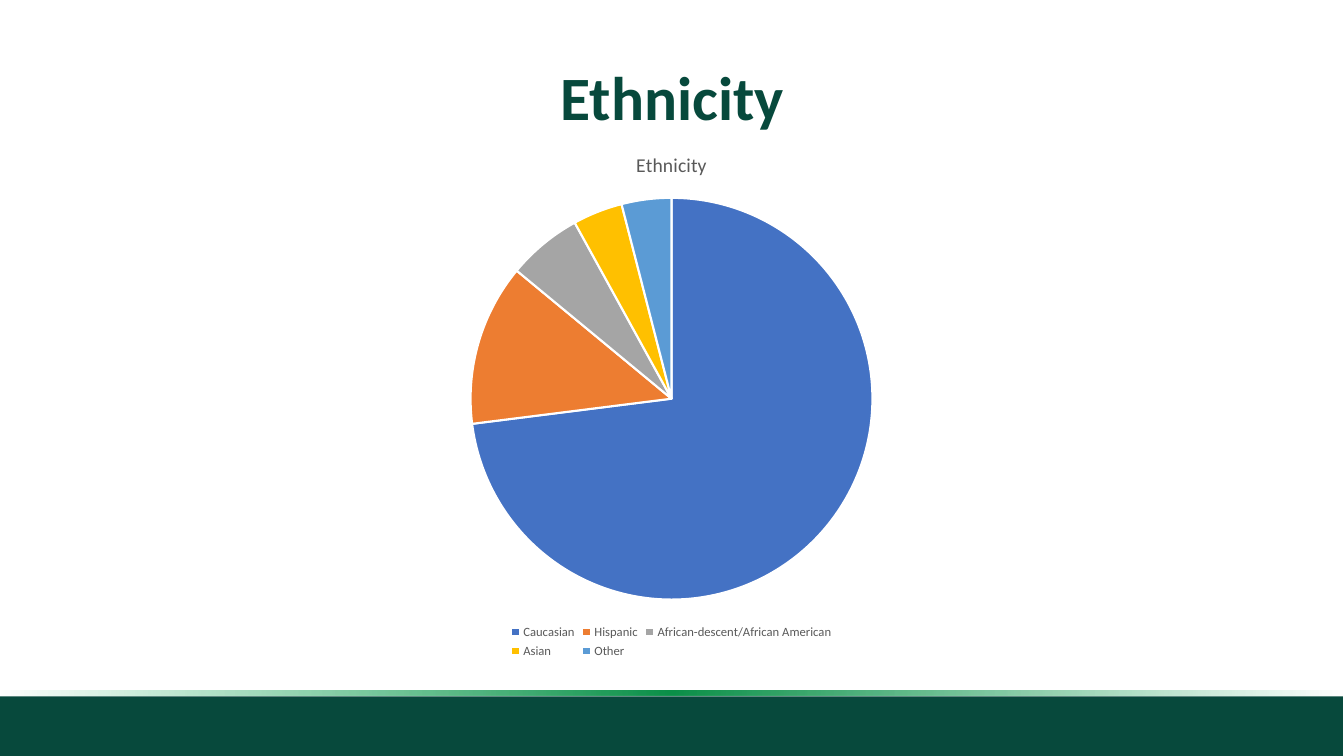
from lxml import etree
from pptx import Presentation
from pptx.chart.data import CategoryChartData
from pptx.dml.color import RGBColor
from pptx.enum.chart import XL_CHART_TYPE as ChartType, XL_LEGEND_POSITION as LegendPosition
from pptx.enum.shapes import MSO_SHAPE as Shape
from pptx.enum.text import MSO_ANCHOR as Anchor, PP_ALIGN as Align
from pptx.oxml.ns import qn
from pptx.util import Inches, Pt

HEADING = "Ethnicity"
SHARES = [
    ("Caucasian", 73, "blue"),
    ("Hispanic", 13, "orange"),
    ("African-descent/African American", 6, "gray"),
    ("Asian", 4, "yellow"),
    ("Other", 4, "sky"),
]
COLORS = {
    "green": "07493C", "text": "595959", "white": "FFFFFF",
    "blue": "4472C4", "orange": "ED7D31", "gray": "A5A5A5",
    "yellow": "FFC000", "sky": "5B9BD5",
    "glow_start": "0D9D4F", "glow_middle": "0C9049", "glow_end": "0FAB56",
}
GLOW_STOPS = [(0, "glow_start", 0), (50, "glow_middle", 100), (100, "glow_end", 0)]
PLACES = {
    "footer": (0, 6.91, 13.32, 0.6),
    "glow": (0, 6.85, 13.33, 0.05),
    "heading": (0.92, 0.4, 11.5, 1.19),
    "pie": (2.44, 1.31, 8.44, 5.26),
}
FONTS = {
    "heading": {"size": Pt(44), "bold": True, "name": "Calibri"},
    "pie": {"size": Pt(10), "bold": False, "name": "Calibri"},
    "pie_title": {"size": Pt(14), "bold": False, "name": "Calibri"},
    "legend": {"size": Pt(9), "bold": False, "name": "Calibri"},
}


def color(name):
    """Return the named colour."""
    return RGBColor.from_string(COLORS[name])


def place(part):
    """Return the left, top, width and height of a part."""
    return [Inches(length) for length in PLACES[part]]


def style(font, part, color_name):
    """Apply the format values of a part to a font."""
    for attribute, value in FONTS[part].items():
        setattr(font, attribute, value)
    font.color.rgb = color(color_name)


def add_band(slide, part):
    """Add a borderless green band."""
    band = slide.shapes.add_shape(Shape.RECTANGLE, *place(part))
    band.shadow.inherit = False
    band.fill.solid()
    band.fill.fore_color.rgb = color("green")
    band.line.fill.background()
    return band


def fade(band):
    """Replace the fill of a band with a gradient that fades at both ends."""
    solid = band.fill._xPr.find(qn("a:solidFill"))
    gradient = etree.Element(qn("a:gradFill"), rotWithShape="1")
    stops = etree.SubElement(gradient, qn("a:gsLst"))
    for position, name, opacity in GLOW_STOPS:
        stop = etree.SubElement(stops, qn("a:gs"), pos=str(position * 1000))
        tint = etree.SubElement(stop, qn("a:srgbClr"), val=COLORS[name])
        etree.SubElement(tint, qn("a:alpha"), val=str(opacity * 1000))
    etree.SubElement(gradient, qn("a:lin"), ang=str(180 * 60000), scaled="0")
    solid.getparent().replace(solid, gradient)


def add_heading(slide):
    """Add the slide heading."""
    frame = slide.shapes.add_textbox(*place("heading")).text_frame
    frame.word_wrap = True
    frame.vertical_anchor = Anchor.MIDDLE
    paragraph = frame.paragraphs[0]
    paragraph.text = HEADING
    paragraph.alignment = Align.CENTER
    paragraph.line_spacing = 0.9
    style(paragraph.runs[0].font, "heading", "green")


def add_pie(slide):
    """Add the pie chart with its title and legend."""
    data = CategoryChartData()
    data.categories = [name for name, _, _ in SHARES]
    data.add_series("Series 1", [share for _, share, _ in SHARES])
    pie = slide.shapes.add_chart(ChartType.PIE, *place("pie"), data).chart
    style(pie.font, "pie", "text")

    pie.has_title = True
    pie.chart_title.include_in_layout = False
    title = pie.chart_title.text_frame
    title.text = HEADING
    style(title.paragraphs[0].runs[0].font, "pie_title", "text")

    pie.has_legend = True
    pie.legend.position = LegendPosition.BOTTOM
    pie.legend.include_in_layout = False
    style(pie.legend.font, "legend", "text")

    plot = pie.plots[0]
    plot.vary_by_categories = True
    for index, (_, _, name) in enumerate(SHARES):
        wedge = plot.series[0].points[index].format
        wedge.fill.solid()
        wedge.fill.fore_color.rgb = color(name)
        wedge.line.color.rgb = color("white")
        wedge.line.width = Pt(1.5)


def main():
    """Build and save the slide."""
    deck = Presentation()
    deck.slide_width, deck.slide_height = Inches(13.33), Inches(7.5)
    slide = deck.slides.add_slide(deck.slide_layouts[6])
    add_band(slide, "footer")
    fade(add_band(slide, "glow"))
    add_heading(slide)
    add_pie(slide)
    deck.save("out.pptx")


if __name__ == "__main__":
    main()
